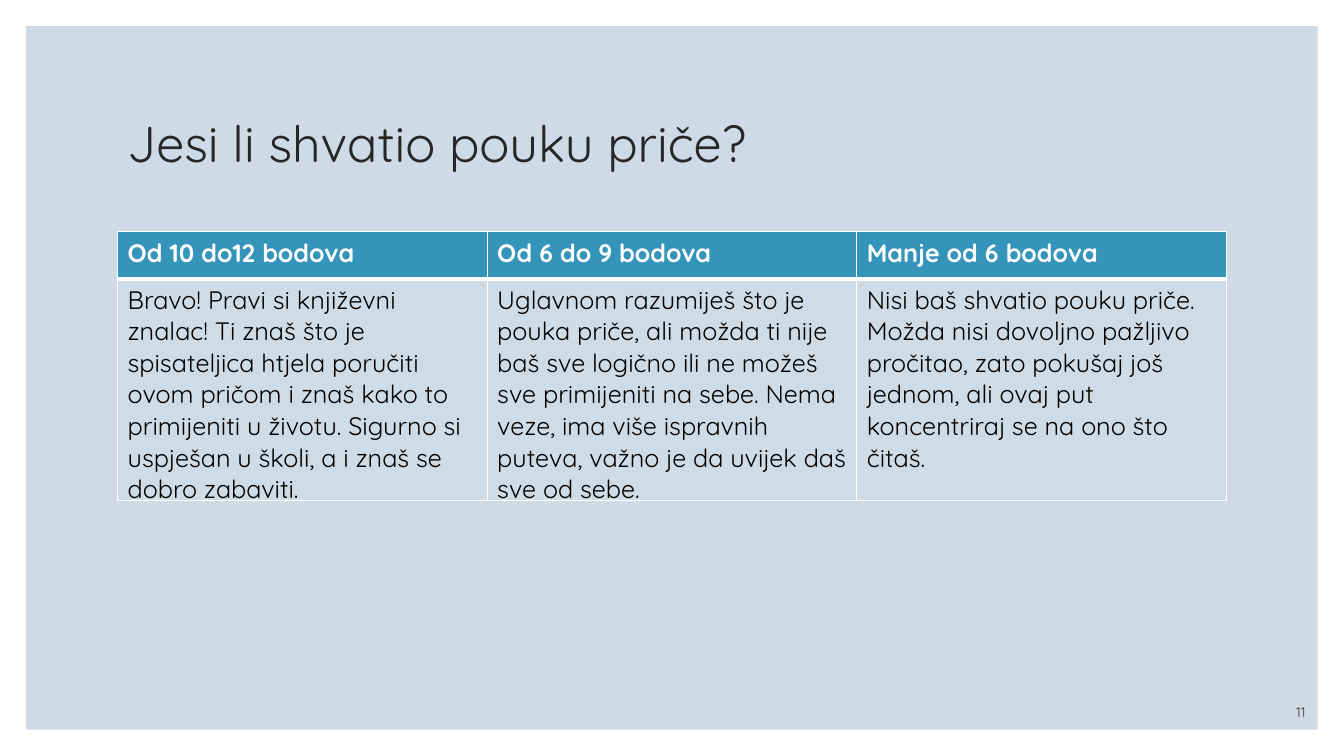
from dataclasses import dataclass

from lxml import etree
from pptx import Presentation
from pptx.dml.color import RGBColor
from pptx.enum.shapes import MSO_SHAPE
from pptx.enum.text import MSO_ANCHOR, PP_ALIGN
from pptx.oxml.ns import qn
from pptx.slide import Slide
from pptx.table import _Cell
from pptx.text.text import TextFrame
from pptx.util import Pt

RECTANGLE = MSO_SHAPE.RECTANGLE
TOP, MIDDLE, BOTTOM = MSO_ANCHOR.TOP, MSO_ANCHOR.MIDDLE, MSO_ANCHOR.BOTTOM
LEFT, RIGHT = PP_ALIGN.LEFT, PP_ALIGN.RIGHT

FONT = "Quicksand"
COLORS = {
    "panel": "CEDBE6",
    "title": "262626",
    "page_number": "404040",
    "header": "3494BA",
    "body": "CEDCE7",
    "body_text": "000000",
    "white": "FFFFFF",
}
SLIDE_WIDTH, SLIDE_HEIGHT = 960, 540
PANEL_MARGIN = 18.72
CONTENT_LEFT, CONTENT_WIDTH = 84, 792
TABLE_TOP = 165.6
HEADER_HEIGHT, BODY_HEIGHT = 33.6, 145.4
THIN, THICK = 1, 3


@dataclass(frozen=True)
class Box:
    left: float
    top: float
    width: float
    height: float

    def lengths(self) -> tuple[Pt, Pt, Pt, Pt]:
        return Pt(self.left), Pt(self.top), Pt(self.width), Pt(self.height)


@dataclass(frozen=True)
class ScoreBand:
    points: str
    feedback: str


SCORE_BANDS = [
    ScoreBand(
        "Od 10 do12 bodova",
        "Bravo! Pravi si književni znalac! Ti znaš što je spisateljica htjela "
        "poručiti ovom pričom i znaš kako to primijeniti u životu. Sigurno si "
        "uspješan u školi, a i znaš se dobro zabaviti.",
    ),
    ScoreBand(
        "Od 6 do 9 bodova",
        "Uglavnom razumiješ što je pouka priče, ali možda ti nije baš sve "
        "logično ili ne možeš sve primijeniti na sebe. Nema veze, ima više "
        "ispravnih puteva, važno je da uvijek daš sve od sebe.",
    ),
    ScoreBand(
        "Manje od 6 bodova",
        "Nisi baš shvatio pouku priče. Možda nisi dovoljno pažljivo pročitao, "
        "zato pokušaj još jednom, ali ovaj put koncentriraj se na ono što čitaš.",
    ),
]


def rgb(color: str) -> RGBColor:
    return RGBColor.from_string(COLORS[color])


def write(frame: TextFrame, text: str, *, size: float, color: str,
          bold: bool = False, align: PP_ALIGN = LEFT,
          anchor: MSO_ANCHOR = TOP, line_spacing: float = 1.0) -> None:
    frame.word_wrap = True
    frame.vertical_anchor = anchor
    paragraph = frame.paragraphs[0]
    paragraph.alignment = align
    paragraph.line_spacing = line_spacing
    run = paragraph.add_run()
    run.text = text
    run.font.name = FONT
    run.font.size = Pt(size)
    run.font.bold = bold
    run.font.color.rgb = rgb(color)


def add_panel(slide: Slide, box: Box) -> None:
    panel = slide.shapes.add_shape(RECTANGLE, *box.lengths())
    panel.shadow.inherit = False
    panel.fill.solid()
    panel.fill.fore_color.rgb = rgb("panel")
    panel.line.fill.background()


def add_text(slide: Slide, box: Box, text: str, **text_format) -> None:
    frame = slide.shapes.add_textbox(*box.lengths()).text_frame
    write(frame, text, **text_format)


def style_cell(cell: _Cell, fill: str, *, top: float, bottom: float) -> None:
    properties = cell._tc.get_or_add_tcPr()
    edges = {"a:lnL": THIN, "a:lnR": THIN, "a:lnT": top, "a:lnB": bottom}
    for tag, width in edges.items():
        edge = etree.SubElement(properties, qn(tag), w=str(Pt(width)))
        edge_fill = etree.SubElement(edge, qn("a:solidFill"))
        etree.SubElement(edge_fill, qn("a:srgbClr"), val=COLORS["white"])
    cell.fill.solid()
    cell.fill.fore_color.rgb = rgb(fill)


def add_score_table(slide: Slide, bands: list[ScoreBand]) -> None:
    box = Box(CONTENT_LEFT, TABLE_TOP, CONTENT_WIDTH, HEADER_HEIGHT + BODY_HEIGHT)
    table = slide.shapes.add_table(2, len(bands), *box.lengths()).table
    table.rows[0].height = Pt(HEADER_HEIGHT)
    table.rows[1].height = Pt(BODY_HEIGHT)
    for column, band in enumerate(bands):
        table.columns[column].width = Pt(CONTENT_WIDTH / len(bands))
        header, body = table.cell(0, column), table.cell(1, column)
        style_cell(header, "header", top=THIN, bottom=THICK)
        style_cell(body, "body", top=THICK, bottom=THIN)
        write(header.text_frame, band.points, size=18, color="white", bold=True)
        write(body.text_frame, band.feedback, size=18, color="body_text")


def main() -> None:
    presentation = Presentation()
    presentation.slide_width = Pt(SLIDE_WIDTH)
    presentation.slide_height = Pt(SLIDE_HEIGHT)
    slide = presentation.slides.add_slide(presentation.slide_layouts[6])

    add_panel(slide, Box(PANEL_MARGIN, PANEL_MARGIN,
                         SLIDE_WIDTH - 2 * PANEL_MARGIN,
                         SLIDE_HEIGHT - 2 * PANEL_MARGIN))
    add_text(slide, Box(CONTENT_LEFT, 50.4, CONTENT_WIDTH, 108),
             "Jesi li shvatio pouku priče?", size=36, color="title",
             anchor=MIDDLE, line_spacing=0.9)
    add_score_table(slide, SCORE_BANDS)
    add_text(slide, Box(824.4, 496.8, 115.2, 21.6), "11", size=10,
             color="page_number", align=RIGHT, anchor=BOTTOM)
    presentation.save("out.pptx")


if __name__ == "__main__":
    main()
